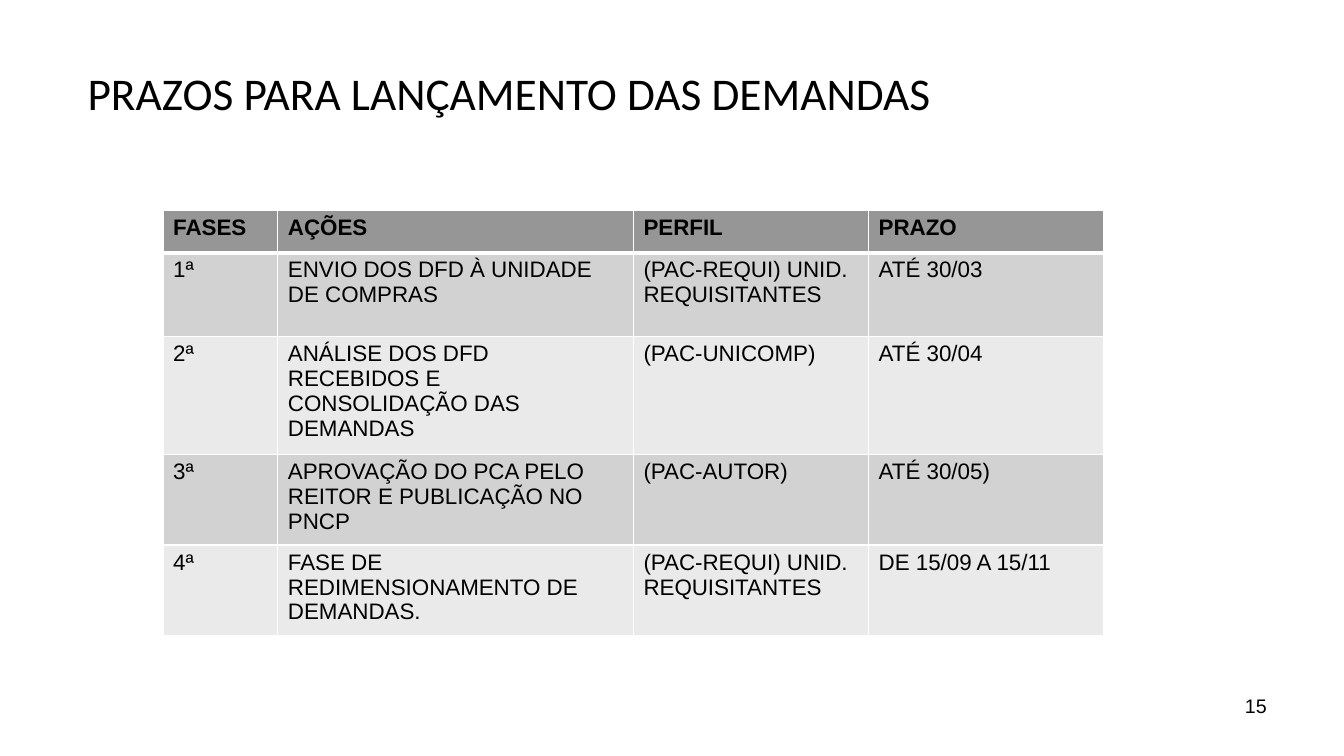
from lxml.etree import SubElement
from pptx import Presentation
from pptx.dml.color import RGBColor
from pptx.enum.text import MSO_ANCHOR, PP_ALIGN
from pptx.oxml.ns import qn
from pptx.util import Pt

COLORS = {"text": "000000", "border": "FFFFFF", "header": "969696",
          "odd": "D2D2D2", "even": "EAEAEA"}

COLUMNS = [82, 254, 168, 168]
HEIGHTS = [30, 60, 79, 60, 60]
ROWS = [
    ["FASES", "AÇÕES", "PERFIL", "PRAZO"],
    ["1ª", "ENVIO DOS DFD À UNIDADE DE COMPRAS",
     "(PAC-REQUI) UNID. REQUISITANTES", "ATÉ 30/03"],
    ["2ª", "ANÁLISE DOS DFD RECEBIDOS E CONSOLIDAÇÃO DAS DEMANDAS",
     "(PAC-UNICOMP)", "ATÉ 30/04"],
    ["3ª", "APROVAÇÃO DO PCA PELO REITOR E PUBLICAÇÃO NO PNCP",
     "(PAC-AUTOR)", "ATÉ 30/05)"],
    ["4ª", "FASE DE REDIMENSIONAMENTO DE DEMANDAS.",
     "(PAC-REQUI) UNID. REQUISITANTES", "DE 15/09 A 15/11"],
]


class SlideBuilder:
    def __init__(self, slide, colors, font="Arial"):
        self.slide = slide
        self.colors = colors
        self.font = font

    def color(self, name):
        return RGBColor.from_string(self.colors[name])

    def run(self, p, text, size, font=None, bold=False):
        r = p.add_run()
        r.text = text
        r.font.name = font or self.font
        r.font.size = Pt(size)
        r.font.bold = bold
        r.font.color.rgb = self.color("text")

    def text(self, text, x, y, w, h, size, font=None,
             align=PP_ALIGN.LEFT, anchor=MSO_ANCHOR.TOP):
        sp = self.slide.shapes.add_textbox(Pt(x), Pt(y), Pt(w), Pt(h))
        tf = sp.text_frame
        tf.word_wrap = True
        tf.vertical_anchor = anchor
        p = tf.paragraphs[0]
        p.alignment = align
        self.run(p, text, size, font)

    def borders(self, cell, bottom):
        tc_pr = cell._tc.get_or_add_tcPr()
        widths = {"lnL": 1, "lnR": 1, "lnT": 1, "lnB": bottom}
        for i, (side, width) in enumerate(widths.items()):
            ln = tc_pr.makeelement(qn(f"a:{side}"), {"w": str(Pt(width))})
            fill = SubElement(ln, qn("a:solidFill"))
            SubElement(fill, qn("a:srgbClr"), val=self.colors["border"])
            tc_pr.insert(i, ln)

    def table(self, rows, x, y, columns, heights, size):
        frame = self.slide.shapes.add_table(
            len(rows), len(columns), Pt(x), Pt(y),
            Pt(sum(columns)), Pt(sum(heights)))
        table = frame.table
        for column, width in zip(table.columns, columns):
            column.width = Pt(width)
        for i, (row, height) in enumerate(zip(rows, heights)):
            table.rows[i].height = Pt(height)
            shade = "header" if i == 0 else "odd" if i % 2 else "even"
            for j, text in enumerate(row):
                cell = table.cell(i, j)
                cell.fill.solid()
                cell.fill.fore_color.rgb = self.color(shade)
                self.borders(cell, bottom=3 if i == 0 else 1)
                self.run(cell.text_frame.paragraphs[0], text, size, bold=i == 0)


def main():
    prs = Presentation()
    prs.slide_width, prs.slide_height = Pt(960), Pt(540)
    s = SlideBuilder(prs.slides.add_slide(prs.slide_layouts[6]), COLORS)
    s.text("PRAZOS PARA LANÇAMENTO DAS DEMANDAS", 55.5, 36, 842, 60, 32.4,
           font="Calibri", anchor=MSO_ANCHOR.MIDDLE)
    s.text("15", 688, 492, 224, 37, 14, align=PP_ALIGN.RIGHT)
    s.table(ROWS, 116.5, 150.5, COLUMNS, HEIGHTS, 16)
    prs.save("out.pptx")


if __name__ == "__main__":
    main()
